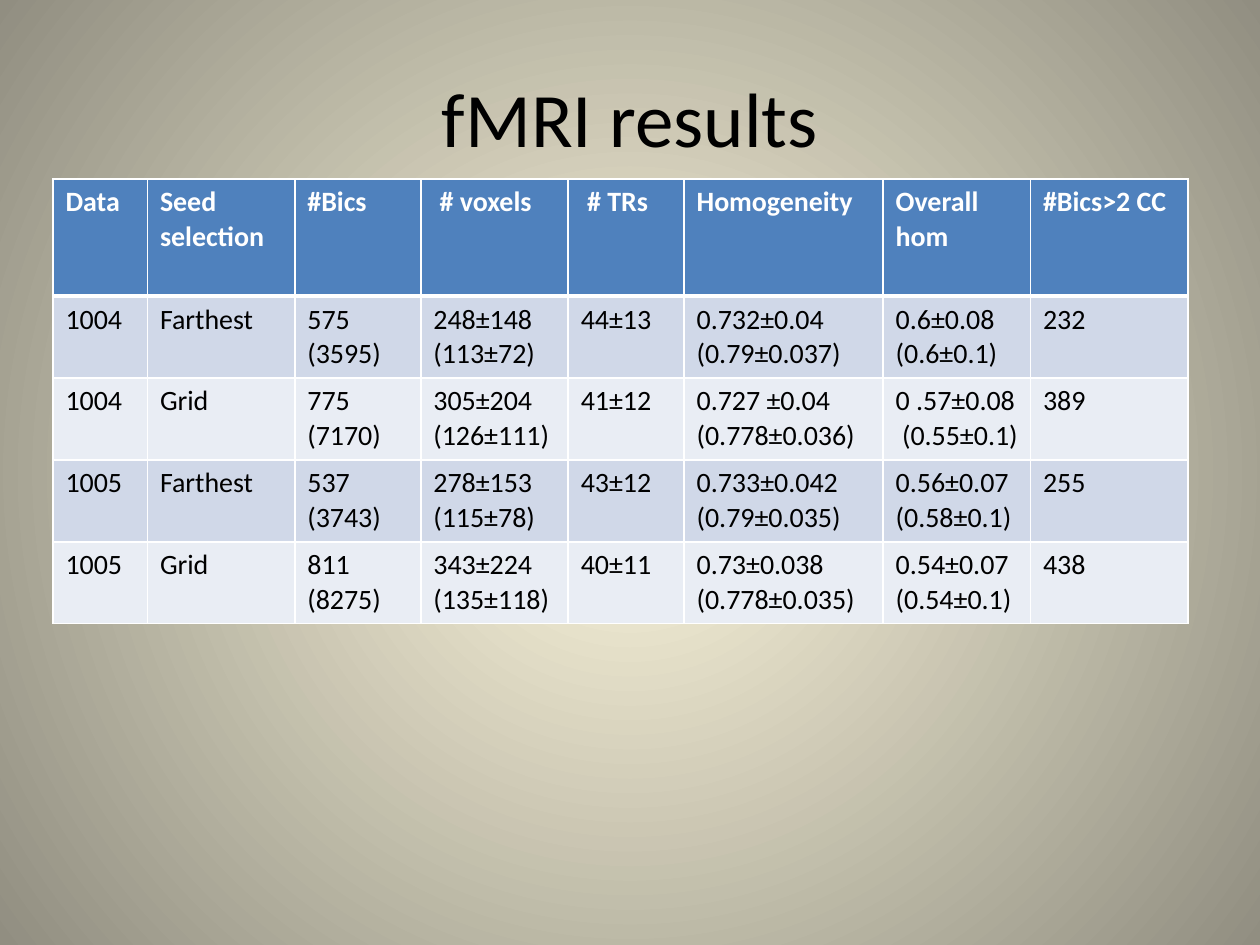
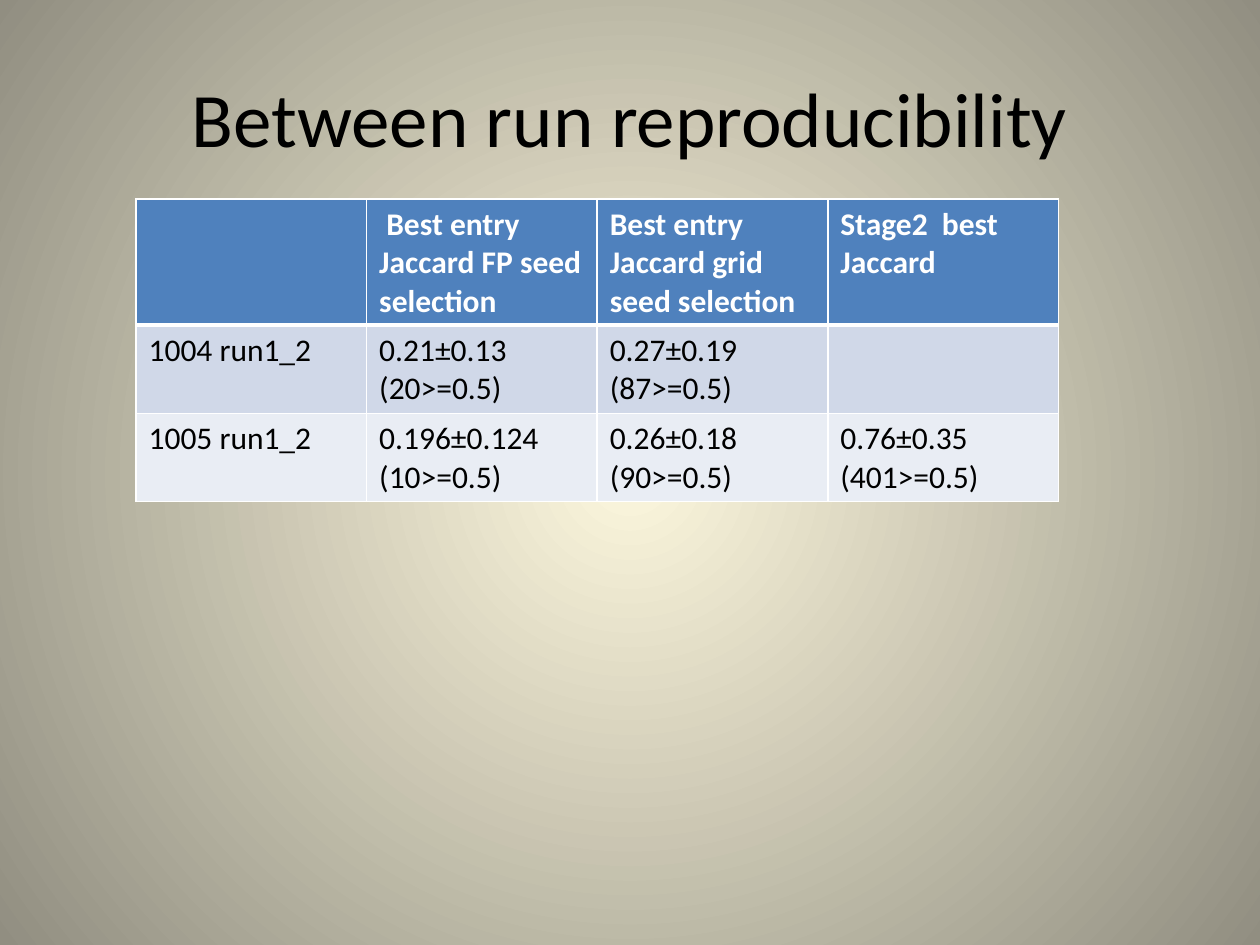
from dataclasses import dataclass

from lxml import etree
from pptx import Presentation
from pptx.dml.color import RGBColor
from pptx.enum import text
from pptx.oxml.ns import qn
from pptx.util import Inches, Pt


@dataclass(frozen=True)
class Theme:
    font: str = "Calibri"
    ink: str = "000000"
    white: str = "FFFFFF"
    header: str = "4F81BD"
    bands: tuple = ("D0D8E8", "E9EDF4")
    glow: tuple = ("FCF7DD", "918E81")
    title_size: int = 44
    rule: int = 1
    header_rule: int = 3


THEME = Theme()
TITLE_BOX = (0.5, 0.3, 9, 1.25)

FMRI_ROWS = (
    ("Data", "Seed selection", "#Bics", " # voxels", " # TRs",
     "Homogeneity", "Overall hom", "#Bics>2 CC"),
    ("1004", "Farthest", "575 (3595)", "248±148 (113±72)", "44±13",
     "0.732±0.04  (0.79±0.037)", "0.6±0.08  (0.6±0.1)", "232"),
    ("1004", "Grid", "775 (7170)", "305±204 (126±111)", "41±12",
     "0.727 ±0.04  (0.778±0.036)", "0 .57±0.08  (0.55±0.1)", "389"),
    ("1005", "Farthest", "537 (3743)", "278±153 (115±78)", "43±12",
     "0.733±0.042 (0.79±0.035)", "0.56±0.07 (0.58±0.1)", "255"),
    ("1005", "Grid", "811 (8275)", "343±224 (135±118)", "40±11",
     "0.73±0.038 (0.778±0.035)", "0.54±0.07 (0.54±0.1)", "438"),
)
FMRI_COLUMNS = (0.75, 1.17, 1, 1.17, 0.92, 1.58, 1.17, 1.25)

REPRODUCIBILITY_ROWS = (
    ("", " Best entry Jaccard FP seed selection",
     "Best entry Jaccard grid seed selection", "Stage2  best Jaccard"),
    ("1004 run1_2", "0.21±0.13  (20>=0.5)", "0.27±0.19 (87>=0.5)", ""),
    ("1005 run1_2", "0.196±0.124  (10>=0.5)", "0.26±0.18 (90>=0.5)",
     "0.76±0.35 (401>=0.5)"),
)
REPRODUCIBILITY_COLUMNS = (1.83,) * 4


def write(frame, words, size, color=THEME.ink, bold=False,
          align=text.PP_ALIGN.LEFT):
    paragraph = frame.paragraphs[0]
    paragraph.alignment = align
    paragraph.font.size = Pt(size)
    if words:
        run = paragraph.add_run()
        run.text = words
        run.font.name = THEME.font
        run.font.size = Pt(size)
        run.font.bold = bold
        run.font.color.rgb = RGBColor.from_string(color)


def paint_background(slide):
    """Fill the slide with a circular glow from its centre."""
    fill = slide.background.fill
    fill.gradient()
    for stop, color, position in zip(fill.gradient_stops, THEME.glow, (0, 1)):
        stop.color.rgb = RGBColor.from_string(color)
        stop.position = position
    gradient = slide.element.find(".//" + qn("a:gradFill"))
    linear = gradient.find(qn("a:lin"))
    if linear is not None:
        gradient.remove(linear)
    circle = etree.SubElement(gradient, qn("a:path"), {"path": "circle"})
    etree.SubElement(circle, qn("a:fillToRect"),
                     {side: "50000" for side in "ltrb"})


def add_title(slide, words, box):
    frame = slide.shapes.add_textbox(*map(Inches, box)).text_frame
    frame.word_wrap = True
    frame.vertical_anchor = text.MSO_ANCHOR.MIDDLE
    write(frame, words, THEME.title_size, align=text.PP_ALIGN.CENTER)


def rule_cell(cell, top, bottom):
    """Draw the four borders of a cell; top and bottom are widths in points."""
    properties = cell._tc.get_or_add_tcPr()
    widths = {"L": THEME.rule, "R": THEME.rule, "T": top, "B": bottom}
    for side, width in widths.items():
        line = etree.SubElement(properties, qn(f"a:ln{side}"),
                                {"w": str(Pt(width))})
        fill = etree.SubElement(line, qn("a:solidFill"))
        etree.SubElement(fill, qn("a:srgbClr"), {"val": THEME.white})


def add_results_table(slide, rows, corner, columns, heights, size):
    box = (*corner, sum(columns), sum(heights))
    table = slide.shapes.add_table(len(rows), len(columns),
                                   *map(Inches, box)).table
    table.first_row = table.horz_banding = False
    for column, width in zip(table.columns, columns):
        column.width = Inches(width)
    for index, (row, height, entries) in enumerate(
            zip(table.rows, heights, rows)):
        row.height = Inches(height)
        is_header = index == 0
        shade = THEME.header if is_header else THEME.bands[(index - 1) % 2]
        for cell, entry in zip(row.cells, entries):
            rule_cell(cell,
                      top=THEME.header_rule if index == 1 else THEME.rule,
                      bottom=THEME.header_rule if is_header else THEME.rule)
            cell.fill.solid()
            cell.fill.fore_color.rgb = RGBColor.from_string(shade)
            write(cell.text_frame, entry, size, bold=is_header,
                  color=THEME.white if is_header else THEME.ink)


def add_results_slide(deck, title, **table):
    slide = deck.slides.add_slide(deck.slide_layouts[6])
    paint_background(slide)
    add_title(slide, title, TITLE_BOX)
    add_results_table(slide, **table)


def main():
    deck = Presentation()
    deck.slide_width, deck.slide_height = Inches(10), Inches(7.5)
    add_results_slide(deck, "fMRI results", rows=FMRI_ROWS,
                      corner=(0.42, 1.42), columns=FMRI_COLUMNS,
                      heights=(0.93,) + (0.65,) * 4, size=16)
    add_results_slide(deck, "Between run reproducibility",
                      rows=REPRODUCIBILITY_ROWS, corner=(1.08, 1.58),
                      columns=REPRODUCIBILITY_COLUMNS,
                      heights=(1, 0.7, 0.7), size=18)
    deck.save("out.pptx")


if __name__ == "__main__":
    main()
